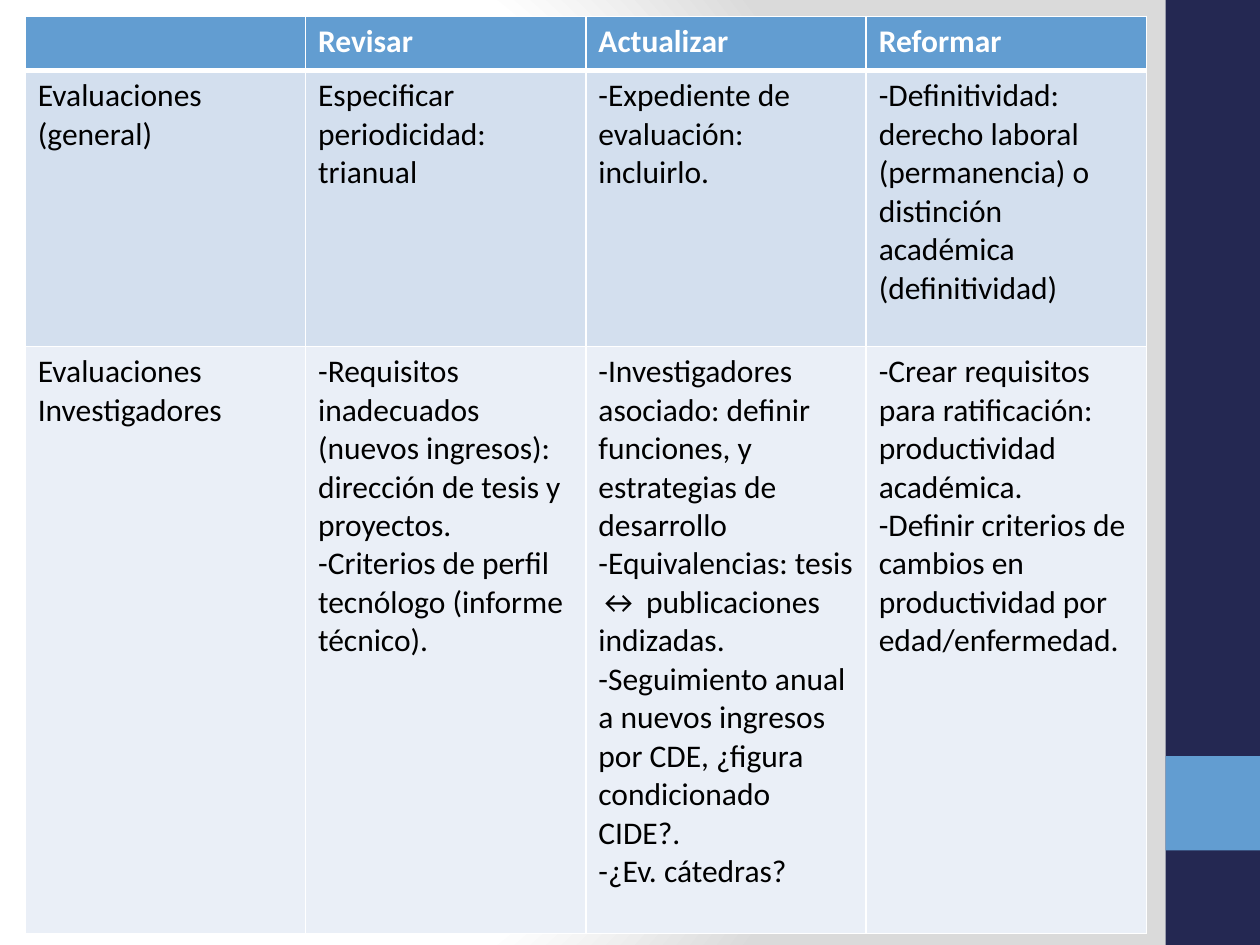
"""Build a slide with a table of proposals for evaluation rules beside a coloured side band."""
from pptx import Presentation
from pptx import util as u
from pptx.dml.color import RGBColor
from pptx.enum import shapes
from pptx.oxml import parse_xml
from pptx.oxml.ns import nsdecls

COLORS = {
    "navy": "242852",
    "blue": "629DD1",
    "general": "D3DFEE",
    "researchers": "EAEFF7",
    "white": "FFFFFF",
    "gray": "DADADA",
    "black": "000000",
}
ROWS = [
    ("blue", 0.43, [[], ["Revisar"], ["Actualizar"], ["Reformar"]]),
    ("general", 2.19, [
        ["Evaluaciones (general)"],
        ["Especificar periodicidad: trianual"],
        ["-Expediente de evaluación: incluirlo."],
        ["-Definitividad: derecho laboral (permanencia) o distinción académica (definitividad)"],
    ]),
    ("researchers", 4.66, [
        ["Evaluaciones Investigadores"],
        ["-Requisitos inadecuados (nuevos ingresos): dirección de tesis y proyectos.",
         "-Criterios de perfil tecnólogo (informe técnico)."],
        ["-Investigadores asociado: definir funciones, y estrategias de desarrollo",
         "-Equivalencias: tesis ↔ publicaciones indizadas.",
         "-Seguimiento anual a nuevos ingresos por CDE, ¿figura condicionado CIDE?.",
         "-¿Ev. cátedras?"],
        ["-Crear requisitos para ratificación: productividad académica.",
         "-Definir criterios de cambios en productividad por edad/enfermedad."],
    ]),
]


def write(frame, lines, color="black", bold=False, size=18, font="Calibri"):
    for index, line in enumerate(lines):
        paragraph = frame.paragraphs[0] if index == 0 else frame.add_paragraph()
        run = paragraph.add_run()
        run.text = line
        run.font.name, run.font.size, run.font.bold = font, u.Pt(size), bold
        run.font.color.rgb = RGBColor.from_string(COLORS[color])


def add_borders(cell, widths):
    properties = cell._tc.get_or_add_tcPr()
    for index, (side, width) in enumerate(widths.items()):
        properties.insert(index, parse_xml(
            f'<a:ln{side} {nsdecls("a")} w="{u.Pt(width)}"><a:solidFill>'
            f'<a:srgbClr val="{COLORS["white"]}"/></a:solidFill></a:ln{side}>'))


presentation = Presentation()
presentation.slide_width, presentation.slide_height = u.Inches(10), u.Inches(7.5)
width, height = presentation.slide_width, presentation.slide_height
slide = presentation.slides.add_slide(presentation.slide_layouts[6])

slide.background.fill.solid()
plain_fill = slide.element.xpath(".//p:bgPr/a:solidFill")[0]
stops = "".join(
    f'<a:gs pos="{share * 1000}"><a:srgbClr val="{COLORS[name]}"/></a:gs>'
    for share, name in [(0, "white"), (75, "white"), (100, "gray")])
plain_fill.getparent().replace(plain_fill, parse_xml(
    f'<a:gradFill {nsdecls("a")} rotWithShape="1"><a:gsLst>{stops}</a:gsLst>'
    '<a:path path="circle"><a:fillToRect l="20000" t="50000" r="100000" b="50000"/>'
    '</a:path></a:gradFill>'))

band_width = int(width * 0.075)
for color, top, band_height in [("navy", 0, 1), ("blue", 0.8, 0.1)]:
    band = slide.shapes.add_shape(
        shapes.MSO_SHAPE.RECTANGLE, width - band_width, int(height * top),
        band_width, int(height * band_height))
    band.shadow.inherit = False
    band.fill.solid()
    band.fill.fore_color.rgb = RGBColor.from_string(COLORS[color])
    band.line.fill.background()

table = slide.shapes.add_table(
    len(ROWS), 4, int(width * 0.02), u.Inches(0.13), int(width * 0.89),
    u.Inches(sum(row[1] for row in ROWS))).table

for row_index, (color, row_height, texts) in enumerate(ROWS):
    table.rows[row_index].height = u.Inches(row_height)
    header = row_index == 0
    for column_index, lines in enumerate(texts):
        cell = table.cell(row_index, column_index)
        cell.fill.solid()
        cell.fill.fore_color.rgb = RGBColor.from_string(COLORS[color])
        add_borders(cell, {"L": 1, "R": 1, "T": 3 if row_index == 1 else 1, "B": 3 if header else 1})
        write(cell.text_frame, lines, color="white" if header else "black", bold=header)

presentation.save("out.pptx")
